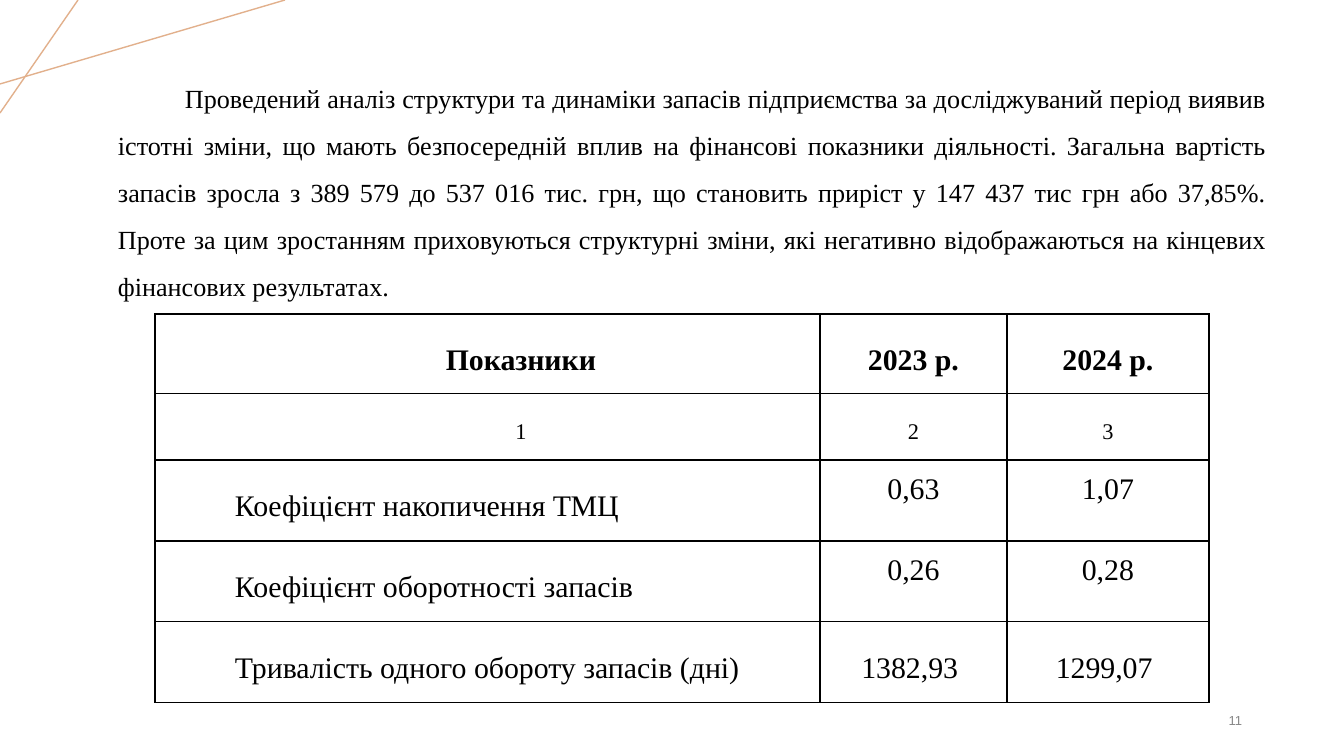
from dataclasses import dataclass

from lxml import etree
from pptx import Presentation
from pptx.dml.color import RGBColor
from pptx.enum.shapes import MSO_CONNECTOR
from pptx.enum.text import MSO_ANCHOR, PP_ALIGN
from pptx.oxml.ns import qn
from pptx.util import Pt

STRAIGHT = MSO_CONNECTOR.STRAIGHT
TOP, MIDDLE = MSO_ANCHOR.TOP, MSO_ANCHOR.MIDDLE
CENTER, RIGHT, JUSTIFY = PP_ALIGN.CENTER, PP_ALIGN.RIGHT, PP_ALIGN.JUSTIFY
WIDE, HIGH = 1344, 756
SCALE = 9144000 / WIDE
BLACK, GRAY, TAN = "000000", "888888", "E2B08C"
SERIF, SANS = "Times New Roman", "Arial"
PAD = 13
INDENT = 67


@dataclass
class Style:
    size: int
    align: PP_ALIGN
    indent: int = 0
    space: float = 1.5
    bold: bool = False
    font: str = SERIF
    color: str = BLACK


@dataclass
class Box:
    x: int
    y: int
    w: int
    h: int


@dataclass
class Row:
    height: int
    texts: tuple[str, str, str]
    first: Style
    rest: Style


@dataclass
class Line:
    x1: int
    y1: int
    x2: int
    y2: int


def emu(px: int) -> int:
    return round(px * SCALE)


def paint(color: str) -> RGBColor:
    return RGBColor.from_string(color)


def write(frame, text: str, style: Style) -> None:
    para = frame.paragraphs[0]
    para.alignment = style.align
    para.line_spacing = style.space
    if style.indent:
        props = para._p.get_or_add_pPr()
        props.set("marL", "0")
        props.set("indent", str(emu(style.indent)))
    run = para.add_run()
    run.text = text
    font = run.font
    font.size = Pt(style.size)
    font.name = style.font
    font.bold = style.bold
    font.color.rgb = paint(style.color)


def inset(item, x: int, y: int) -> None:
    item.margin_left = item.margin_right = emu(x)
    item.margin_top = item.margin_bottom = emu(y)


def add_text(slide, box: Box, text: str, style: Style, pad: tuple[int, int], anchor: MSO_ANCHOR) -> None:
    shape = slide.shapes.add_textbox(emu(box.x), emu(box.y), emu(box.w), emu(box.h))
    frame = shape.text_frame
    frame.word_wrap = True
    frame.vertical_anchor = anchor
    inset(frame, *pad)
    write(frame, text, style)


def add_line(slide, line: Line) -> None:
    shape = slide.shapes.add_connector(
        STRAIGHT, emu(line.x1), emu(line.y1), emu(line.x2), emu(line.y2))
    shape.line.color.rgb = paint(TAN)
    shape.line.width = Pt(0.75)
    etree.SubElement(shape._element.spPr, qn("a:effectLst"))


def frame_cell(cell) -> None:
    props = cell._tc.get_or_add_tcPr()
    for side in ("lnL", "lnR", "lnT", "lnB"):
        edge = etree.SubElement(props, qn(f"a:{side}"), w=str(Pt(0.75)))
        fill = etree.SubElement(edge, qn("a:solidFill"))
        etree.SubElement(fill, qn("a:srgbClr"), val=BLACK)


def add_grid(slide, box: Box, widths: list[int], rows: list[Row]) -> None:
    table = slide.shapes.add_table(
        len(rows), len(widths), emu(box.x), emu(box.y), emu(box.w), emu(box.h)).table
    table.first_row = table.horz_banding = False
    for col, width in zip(table.columns, widths):
        col.width = emu(width)
    for line, row in zip(table.rows, rows):
        line.height = emu(row.height)
        styles = (row.first, row.rest, row.rest)
        for cell, text, style in zip(line.cells, row.texts, styles):
            frame_cell(cell)
            cell.fill.background()
            cell.vertical_anchor = TOP
            inset(cell, PAD, PAD)
            write(cell.text_frame, text, style)


LINES = [Line(0, 84, 285, 0), Line(78, 0, 0, 113)]
BODY = (
    "Проведений аналіз структури та динаміки запасів підприємства за досліджуваний період виявив "
    "істотні зміни, що мають безпосередній вплив на фінансові показники діяльності. Загальна вартість "
    "запасів зросла з 389 579 до 537 016 тис. грн, що становить приріст у 147 437 тис грн або 37,85%. "
    "Проте за цим зростанням приховуються структурні зміни, які негативно відображаються на кінцевих "
    "фінансових результатах."
)
PROSE = Style(14, JUSTIFY, INDENT)
PAGE = Style(7, RIGHT, space=1, font=SANS, color=GRAY)
LABEL = Style(16, JUSTIFY, INDENT)
VALUE = Style(16, CENTER, space=1)
ROWS = [
    Row(79, ("Показники", "2023 р.", "2024 р."),
        Style(16, CENTER, INDENT, bold=True), Style(16, CENTER, bold=True)),
    Row(46, ("1", "2", "3"), Style(12, CENTER, INDENT), Style(12, CENTER)),
    Row(81, ("Коефіцієнт накопичення ТМЦ", "0,63", "1,07"), LABEL, VALUE),
    Row(81, ("Коефіцієнт оборотності запасів", "0,26", "0,28"), LABEL, VALUE),
    Row(81, ("Тривалість одного обороту запасів (дні)", "1382,93 ", "1299,07 "),
        LABEL, Style(16, CENTER)),
]


def main() -> None:
    deck = Presentation()
    deck.slide_width, deck.slide_height = emu(WIDE), emu(HIGH)
    slide = deck.slides.add_slide(deck.slide_layouts[6])
    for line in LINES:
        add_line(slide, line)
    add_text(slide, Box(949, 700, 302, 40), "11", PAGE, (9, 5), MIDDLE)
    add_grid(slide, Box(155, 314, 1054, 391), [665, 187, 202], ROWS)
    add_text(slide, Box(105, 54, 1175, 187), BODY, PROSE, (PAD, PAD), TOP)
    deck.save("out.pptx")


if __name__ == "__main__":
    main()
